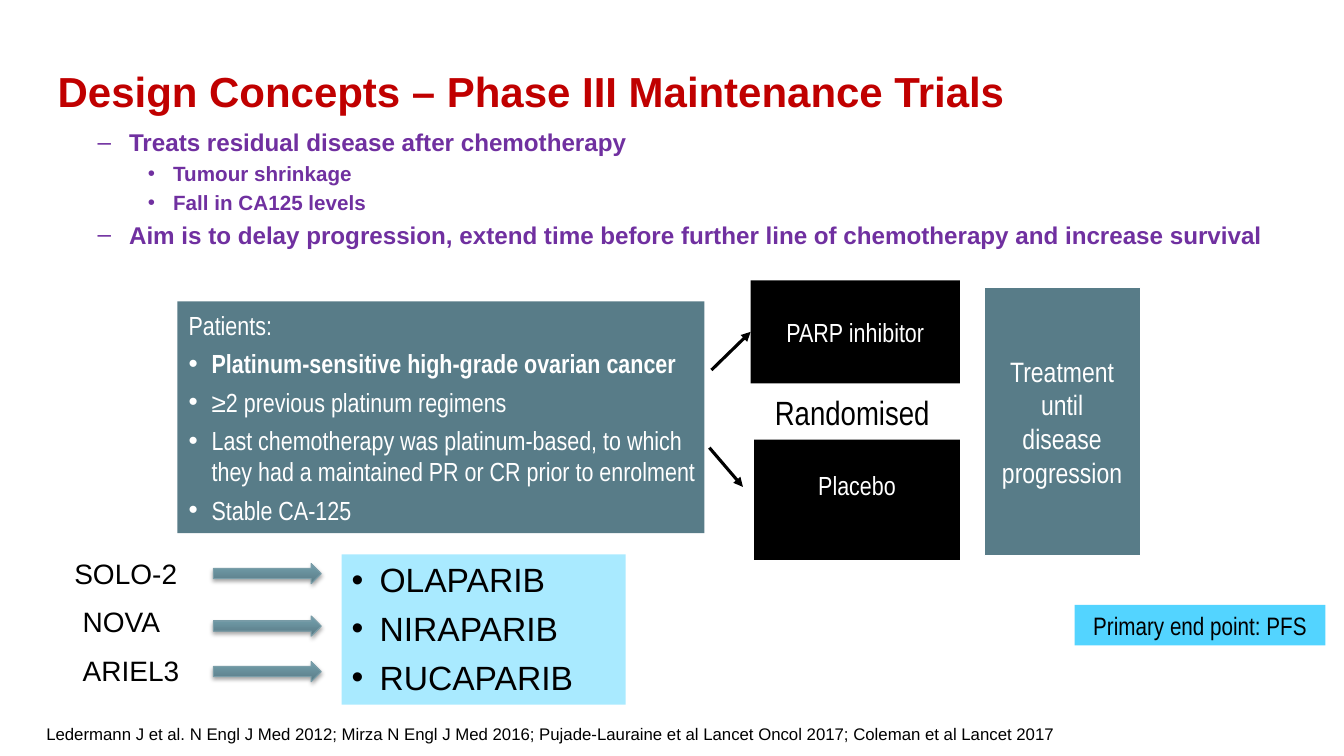
from lxml import etree
from pptx import Presentation
from pptx.dml.color import RGBColor
from pptx.enum import shapes, text
from pptx.oxml import parse_xml
from pptx.oxml.ns import nsdecls, qn
from pptx.util import Pt

RED = RGBColor(0xC0, 0x00, 0x00)
PURPLE = RGBColor(0x70, 0x30, 0xA0)
BLACK = RGBColor(0x00, 0x00, 0x00)
WHITE = RGBColor(0xFF, 0xFF, 0xFF)
SLATE = RGBColor(0x58, 0x7C, 0x88)
SKY = RGBColor(0x53, 0xD4, 0xFF)
PALE = RGBColor(0xA9, 0xEA, 0xFF)
ARROW_DARK = RGBColor(0x5A, 0x7B, 0x85)
ARROW_LIGHT = RGBColor(0x74, 0xA1, 0xAF)
ARROW_EDGE = RGBColor(0x7B, 0x9E, 0xA9)
NARROW = "Arial Narrow"
LEFT, CENTER = text.PP_ALIGN.LEFT, text.PP_ALIGN.CENTER
TOP, MIDDLE = text.MSO_ANCHOR.TOP, text.MSO_ANCHOR.MIDDLE


def set_insets(tf, left, top, right, bottom):
    """Set the four text insets of a frame in points."""
    tf.margin_left, tf.margin_top = Pt(left), Pt(top)
    tf.margin_right, tf.margin_bottom = Pt(right), Pt(bottom)


def style(p, size, color, font="Arial", bold=False, align=LEFT):
    """Format a paragraph and its runs."""
    p.alignment = align
    for r in p.runs:
        r.font.size, r.font.name, r.font.bold = Pt(size), font, bold
        r.font.color.rgb = color


def add_bullet(p, char, margin, hang):
    """Give a paragraph a hanging bullet."""
    pPr = p._p.get_or_add_pPr()
    pPr.set("marL", str(Pt(margin)))
    pPr.set("indent", str(-Pt(hang)))
    etree.SubElement(pPr, qn("a:buFont")).set("typeface", "Arial")
    etree.SubElement(pPr, qn("a:buChar")).set("char", char)


def write(tf, lines, size, color, font="Arial", align=LEFT, gap=0):
    """Fill a text frame with one paragraph per line."""
    tf.text = "\n".join(lines)
    for i, p in enumerate(tf.paragraphs):
        style(p, size, color, font, align=align)
        p.space_before = Pt(gap if i else 0)
    return tf


def add_label(s, box, words, size, font="Arial", align=LEFT, wrap=True):
    """Add a plain black text box."""
    tf = s.shapes.add_textbox(*map(Pt, box)).text_frame
    tf.word_wrap = wrap
    write(tf, [words], size, BLACK, font, align)


def add_panel(s, box, fill, anchor=MIDDLE):
    """Add a flat filled rectangle without an outline."""
    sp = s.shapes.add_shape(shapes.MSO_SHAPE.RECTANGLE, *map(Pt, box))
    sp.shadow.inherit = False
    sp.fill.solid()
    sp.fill.fore_color.rgb = fill
    sp.line.fill.background()
    sp.text_frame.word_wrap = True
    sp.text_frame.vertical_anchor = anchor
    return sp


def add_line_arrow(s, x1, y1, x2, y2):
    """Add a straight black connector with an arrowhead."""
    line = s.shapes.add_connector(shapes.MSO_CONNECTOR.STRAIGHT, *map(Pt, (x1, y1, x2, y2)))
    line.line.color.rgb = BLACK
    line.line.width = Pt(2.25)
    etree.SubElement(line.line._get_or_add_ln(), qn("a:tailEnd")).set("type", "triangle")
    etree.SubElement(line._element.spPr, qn("a:effectLst"))
    return line


def add_block_arrow(s, box):
    """Add a shaded right arrow with a soft shadow below it."""
    sp = s.shapes.add_shape(shapes.MSO_SHAPE.RIGHT_ARROW, *map(Pt, box))
    sp.fill.gradient()
    sp.fill.gradient_angle = 90
    for stop, color in zip(sp.fill.gradient_stops, (ARROW_DARK, ARROW_LIGHT)):
        stop.color.rgb = color
    sp.line.color.rgb = ARROW_EDGE
    sp.line.width = Pt(0.75)
    sp._element.spPr.append(parse_xml(
        f'<a:effectLst {nsdecls("a")}><a:outerShdw blurRad="{Pt(3.1)}" dist="{Pt(1.8)}" '
        'dir="5400000" rotWithShape="0"><a:srgbClr val="000000"><a:alpha val="35000"/>'
        '</a:srgbClr></a:outerShdw></a:effectLst>'))


def add_title(s, box):
    """Place and format the slide title."""
    title = s.shapes.title
    title.left, title.top, title.width, title.height = map(Pt, box)
    tf = title.text_frame
    tf.text = "Design Concepts\u00a0– Phase III Maintenance Trials"
    tf.vertical_anchor = TOP
    style(tf.paragraphs[0], 30, RED, bold=True)


def add_aims(s, box):
    """Add the two-level list of aims."""
    aims = [("–", "Treats residual disease after chemotherapy"),
            ("•", "Tumour shrinkage"),
            ("•", "Fall in CA125 levels"),
            ("–", "Aim is to delay progression, extend time before further line "
                  "of chemotherapy and increase survival")]
    tf = s.shapes.add_textbox(*map(Pt, box)).text_frame
    tf.word_wrap = True
    tf.text = "\n".join(words for _, words in aims)
    for i, (p, (char, _)) in enumerate(zip(tf.paragraphs, aims)):
        main = char == "–"
        add_bullet(p, char, *((58.5, 22.5) if main else (90, 18)))
        p.level = 1 if main else 2
        p.space_before = Pt((4 if main else 3) if i else 0)
        style(p, 17.3 if main else 14.7, PURPLE, bold=True)


def add_patients(s, box):
    """Add the panel of eligibility criteria."""
    tf = add_panel(s, box, SLATE).text_frame
    set_insets(tf, 8, 3.6, 3, 3.6)
    write(tf, ["Patients:", "Platinum-sensitive high-grade ovarian cancer",
               "≥2 previous platinum regimens",
               "Last chemotherapy was platinum-based, to which they had a maintained "
               "PR or CR prior to enrolment",
               "Stable CA-125"], 18.7, WHITE, NARROW, gap=5)
    for p in tf.paragraphs[1:]:
        add_bullet(p, "•", 16.5, 16.5)
    tf.paragraphs[1].runs[0].font.bold = True


def add_trial_design(s, box):
    """Add the flow from patients through randomisation to treatment."""
    x, y, w, h = box
    add_patients(s, (x, y + 15, 376.5, 165.6))

    inhibitor = add_panel(s, (x + 409.5, y, 149.5, 73.5), BLACK)
    placebo = add_panel(s, (x + 412, y + 113.8, 147, 85.8), BLACK)
    for arm, words, bottom in ((inhibitor, "PARP inhibitor", 3.6), (placebo, "Placebo", 24)):
        set_insets(arm.text_frame, 1.5, 3.6, 1.5, bottom)
        write(arm.text_frame, [words], 18.7, WHITE, NARROW, CENTER)
    add_label(s, (x + 412, y + 76, 140, 36), "Randomised", 24, NARROW, CENTER)

    add_line_arrow(s, x + 381.5, y + 64, x + 409.5, y + 36.75).end_connect(inhibitor, 1)
    add_line_arrow(s, x + 380, y + 119.5, x + 404, y + 147.5)

    duration = add_panel(s, (x + w - 111.5, y + 5, 111.5, h - 8), SLATE)
    duration.line.color.rgb = WHITE
    duration.line.width = Pt(0.25)
    write(duration.text_frame, ["Treatment until", "disease", "progression"],
          20, WHITE, NARROW, CENTER)


def add_trials(s, box):
    """Add the trial names, their arrows and the drugs they test."""
    x, y, w, h = box
    rows = [("SOLO-2", 0, 0, 8.5), ("NOVA", 6, 34, 46), ("ARIEL3", 6, 69, 78.5)]
    drugs = add_panel(s, (x + w - 203, y + 2, 203, h - 2), PALE, TOP).text_frame
    write(drugs, ["OLAPARIB", "NIRAPARIB", "RUCAPARIB"], 24, BLACK, gap=6)
    for p in drugs.paragraphs:
        add_bullet(p, "•", 20, 20)
    for name, indent, label_top, arrow_top in rows:
        add_block_arrow(s, (x + 106.5, y + arrow_top, 77, 14.4))
        add_label(s, (x + indent, y + label_top, 88, 31.5), name, 20, wrap=False)


def add_end_point(s, box):
    """Add the primary end point tag."""
    write(add_panel(s, box, SKY).text_frame, ["Primary end point: PFS"],
          18, BLACK, NARROW, CENTER)


def main():
    """Build the slide and save it."""
    prs = Presentation()
    prs.slide_width, prs.slide_height = Pt(960), Pt(540)
    s = prs.slides.add_slide(prs.slide_layouts[5])
    add_title(s, (34, 43, 891, 102))
    add_aims(s, (26.6, 87.5, 891, 106))
    add_trial_design(s, (126.7, 200.3, 687.7, 199.5))
    add_trials(s, (46, 394, 401, 109.3))
    add_end_point(s, (767.5, 432, 179.3, 29))
    add_label(s, (26, 513.4, 930, 21.6),
              "Ledermann J et al. N Engl J Med 2012; Mirza N Engl J Med 2016; "
              "Pujade-Lauraine et al Lancet Oncol 2017; Coleman et al Lancet 2017", 12)
    prs.save("out.pptx")


if __name__ == "__main__":
    main()
